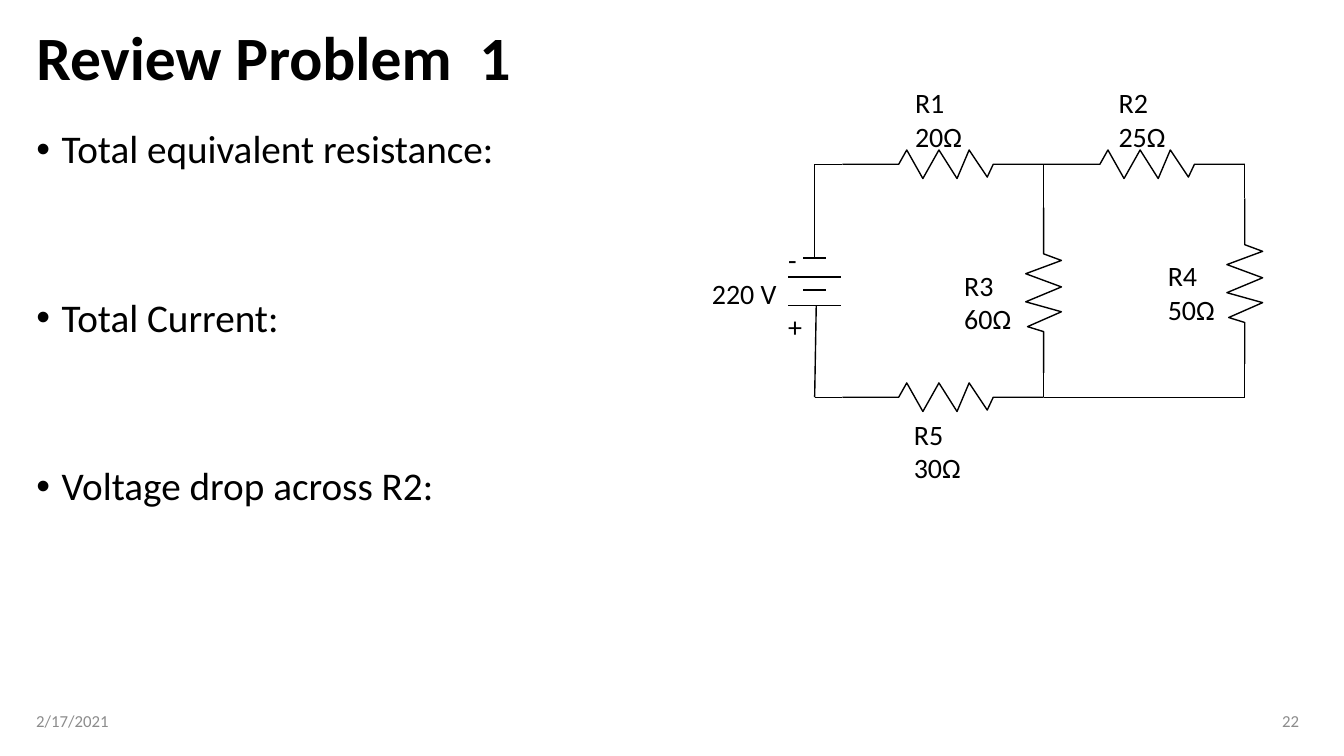
import pptx
import pptx.dml.color
import pptx.enum.shapes
import pptx.enum.text
import pptx.oxml.ns
import pptx.util
from dataclasses import dataclass
from lxml import etree

Cm = pptx.util.Cm
Pt = pptx.util.Pt
ALIGN = pptx.enum.text.PP_ALIGN
ANCHOR = pptx.enum.text.MSO_ANCHOR


@dataclass(frozen=True)
class Theme:
    font: str = "Calibri"
    ink: str = "000000"
    muted: str = "8C8C8C"
    title_size: int = 44
    body_size: int = 28
    label_size: int = 20
    footer_size: int = 12
    line_width: float = 1


@dataclass(frozen=True)
class Box:
    """A region in centimetres."""
    left: float
    top: float
    width: float
    height: float

    def place(self, shape):
        shape.left, shape.top = Cm(self.left), Cm(self.top)
        shape.width, shape.height = Cm(self.width), Cm(self.height)


THEME = Theme()

# Resistor outline: fraction of the length, fraction of the amplitude
ZIGZAG = [(0, 0), (0.28, 0), (0.32, -1), (0.4, 1), (0.48, -1), (0.57, 1),
          (0.63, -1), (0.72, 0.9), (0.75, 0), (1, 0)]


def color(value):
    return pptx.dml.color.RGBColor.from_string(value)


def format_text(text_frame, size, ink=THEME.ink, bold=False, align=ALIGN.LEFT):
    for paragraph in text_frame.paragraphs:
        paragraph.alignment = align
        for run in paragraph.runs:
            run.font.name = THEME.font
            run.font.size = Pt(size)
            run.font.bold = bold
            run.font.color.rgb = color(ink)


def format_line(shape):
    shape.line.color.rgb = color(THEME.ink)
    shape.line.width = Pt(THEME.line_width)


def add_text(shapes, box, text, size, ink=THEME.ink, align=ALIGN.LEFT, anchor=ANCHOR.TOP):
    shape = shapes.add_textbox(0, 0, 0, 0)
    box.place(shape)
    text_frame = shape.text_frame
    text_frame.word_wrap = True
    text_frame.vertical_anchor = anchor
    text_frame.text = text
    format_text(text_frame, size, ink, align=align)
    return shape


def add_title(slide, box, text):
    title = slide.shapes.title
    box.place(title)
    text_frame = title.text_frame
    text_frame.text = text
    text_frame.auto_size = pptx.enum.text.MSO_AUTO_SIZE.NONE
    text_frame.vertical_anchor = ANCHOR.MIDDLE
    text_frame.paragraphs[0].line_spacing = 0.9
    format_text(text_frame, THEME.title_size, bold=True)


def add_questions(slide, box, questions):
    body = slide.placeholders[1]
    box.place(body)
    text_frame = body.text_frame
    text_frame.text = "\n".join(questions)
    text_frame.auto_size = pptx.enum.text.MSO_AUTO_SIZE.NONE
    text_frame.vertical_anchor = ANCHOR.TOP
    format_text(text_frame, THEME.body_size)
    for index, paragraph in enumerate(text_frame.paragraphs):
        paragraph.line_spacing = 0.9
        # Room to answer before the next question
        paragraph.space_before = Pt(90 if index else 10)
        properties = paragraph._p.get_or_add_pPr()
        properties.set("marL", str(Cm(0.64)))
        properties.set("indent", str(-Cm(0.64)))
        bullet_font = etree.SubElement(properties, pptx.oxml.ns.qn("a:buFont"))
        bullet_font.set("typeface", "Arial")
        bullet = etree.SubElement(properties, pptx.oxml.ns.qn("a:buChar"))
        bullet.set("char", "•")


def add_footer(slide, box, date, number):
    half = box.width / 2
    for offset, text, align in ((0, date, ALIGN.LEFT), (half, number, ALIGN.RIGHT)):
        part = Box(box.left + offset, box.top, half, box.height)
        add_text(slide.shapes, part, text, THEME.footer_size, THEME.muted, align, ANCHOR.MIDDLE)


def add_wire(shapes, start, end):
    wire = shapes.add_connector(
        pptx.enum.shapes.MSO_CONNECTOR.STRAIGHT,
        Cm(start[0]), Cm(start[1]), Cm(end[0]), Cm(end[1]))
    format_line(wire)
    etree.SubElement(wire._element.spPr, pptx.oxml.ns.qn("a:effectLst"))


def add_resistor(shapes, left, top, vertical=False):
    length, amplitude = (4.17, -0.45) if vertical else (5.07, 0.36)
    points = []
    for along, across in ZIGZAG:
        step, swing = along * length, across * amplitude
        x, y = (swing, step) if vertical else (step, swing)
        points.append((Cm(left + x), Cm(top + y)))
    builder = shapes.build_freeform(*points[0])
    builder.add_line_segments(points[1:], close=False)
    resistor = builder.convert_to_shape()
    resistor.shadow.inherit = False
    resistor.fill.background()
    format_line(resistor)


def add_battery(shapes, x, top, bottom):
    # Plates alternate short and long, from the negative end down
    plates = [(2.44, 0.29), (2.92, 0.66), (3.25, 0.29), (3.64, 0.66)]
    middle = top - 0.08
    for offset, half_width in plates:
        y = middle + offset
        add_wire(shapes, (x - half_width, y), (x + half_width, y))
    add_wire(shapes, (x, top), (x, middle + plates[0][0]))
    add_wire(shapes, (x + 0.04, middle + plates[-1][0]), (x, bottom))
    # Voltage between the two signs
    label = add_text(shapes, Box(x - 2.84, top + 1.85, 2.87, 2.82),
                     "-\n220 V\n+", THEME.label_size)
    for sign in label.text_frame.paragraphs[::2]:
        sign._p.get_or_add_pPr().set("marL", str(Cm(1.92)))


def add_circuit(slide, box):
    shapes = slide.shapes.add_group_shape().shapes
    top, bottom = box.top + 2.11, box.top + 7.98
    battery_x = box.left + 2.85
    loop_x = box.left + 3.55
    middle_x, right_x = loop_x + 5.07, loop_x + 10.14

    # Resistors along the top and bottom
    for x, y in ((loop_x, top), (middle_x, top), (loop_x, bottom)):
        add_resistor(shapes, x, y)

    # Branches: vertical resistors with wires to the top and bottom
    for x, lead in ((middle_x, 1.09), (right_x, 0.86)):
        add_resistor(shapes, x, top + lead, vertical=True)
        add_wire(shapes, (x, top), (x, top + lead))
        add_wire(shapes, (x, top + lead + 4.17), (x, bottom))

    # Battery side and closing wire
    add_battery(shapes, battery_x, top, bottom)
    for y in (top, bottom):
        add_wire(shapes, (battery_x, y), (loop_x, y))
    add_wire(shapes, (middle_x, bottom), (right_x, bottom))

    # Resistor names and values
    labels = [("R1", 20, 5.13, 0), ("R2", 25, 10.26, 0), ("R3", 60, 6.37, 4.6),
              ("R4", 50, 11.5, 4.37), ("R5", 30, 5.1, 8.36)]
    for name, ohms, x, y in labels:
        add_text(shapes, Box(box.left + x, box.top + y, 2, 1.96),
                 f"{name}\n{ohms}Ω", THEME.label_size)


def add_review_slide(presentation):
    slide = presentation.slides.add_slide(presentation.slide_layouts[1])
    add_title(slide, Box(0.66, 0.38, 32.33, 2.29), "Review Problem  1")
    add_questions(slide, Box(0.66, 3.15, 32.33, 14.22),
                  ["Total equivalent resistance:", "Total Current:", "Voltage drop across R2:"])
    add_footer(slide, Box(0.66, 17.65, 32.33, 1.02), "2/17/2021", "22")
    add_circuit(slide, Box(17.68, 2.03, 14.4, 10.32))


def main():
    presentation = pptx.Presentation()
    presentation.slide_width = Cm(33.87)
    presentation.slide_height = Cm(19.05)
    add_review_slide(presentation)
    presentation.save("out.pptx")


if __name__ == "__main__":
    main()
